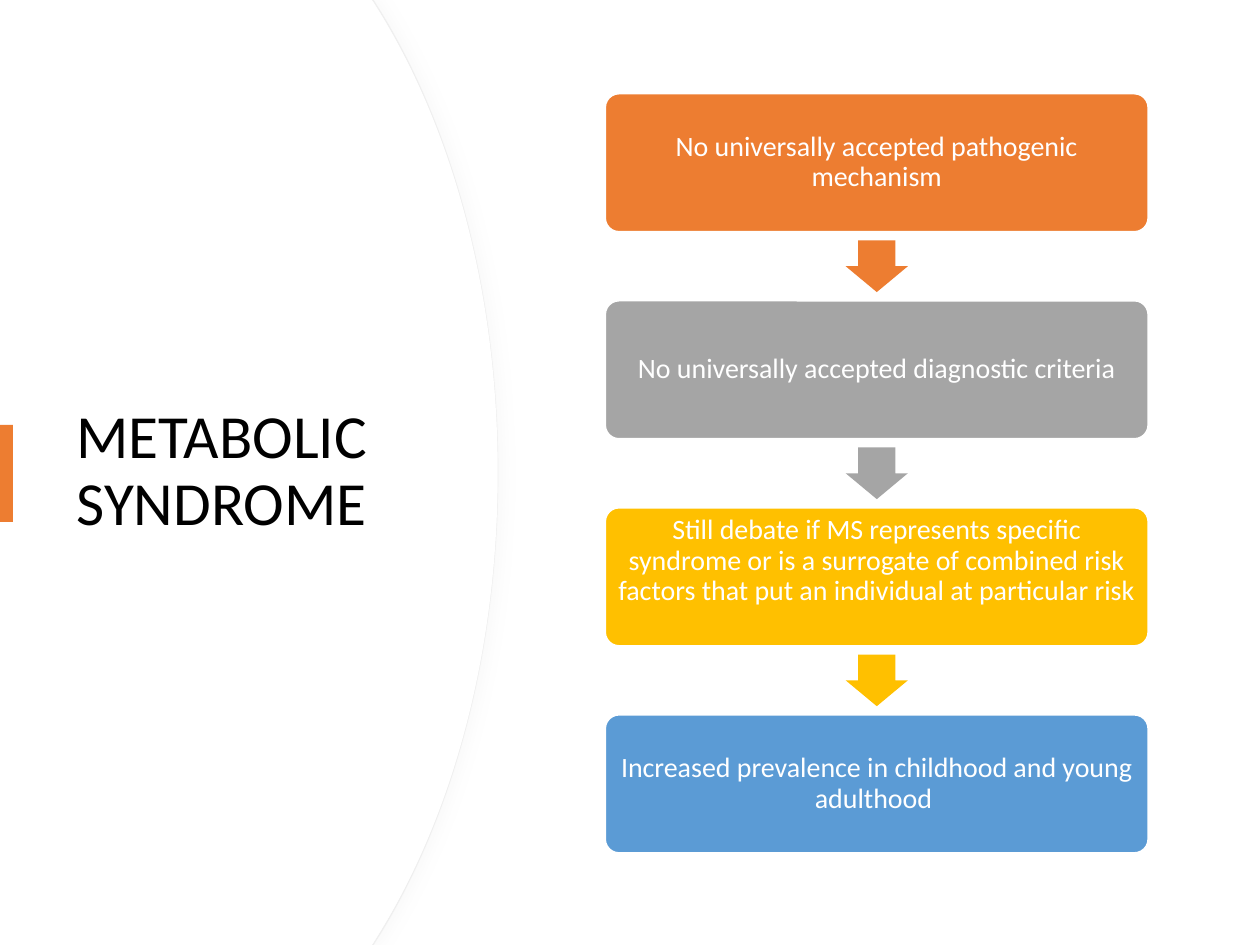
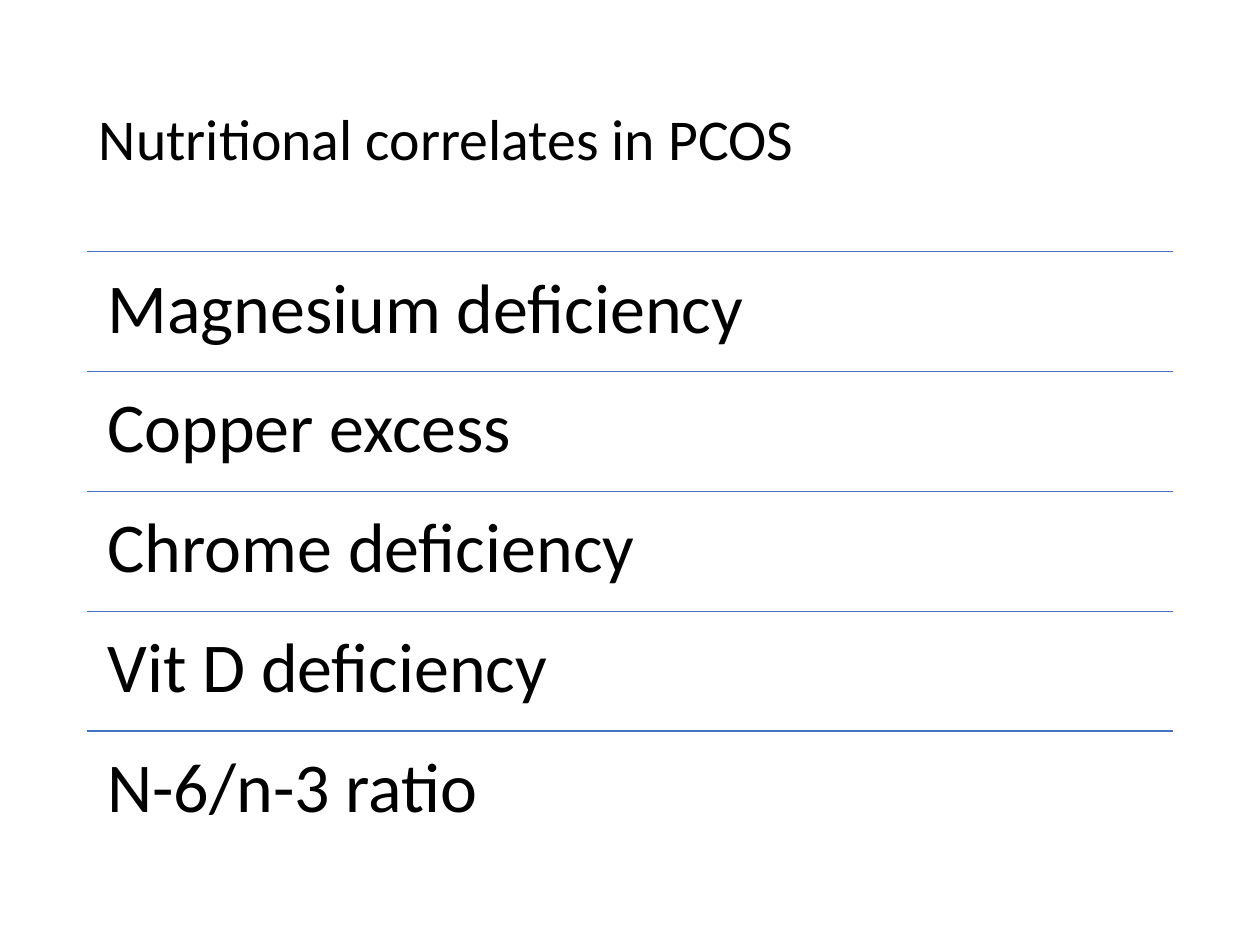
from dataclasses import dataclass

from lxml import etree
from pptx import Presentation
from pptx.dml.color import RGBColor
from pptx.enum.shapes import MSO_CONNECTOR, MSO_SHAPE
from pptx.enum.text import MSO_ANCHOR, PP_ALIGN
from pptx.oxml import parse_xml
from pptx.oxml.ns import nsdecls, qn
from pptx.util import Emu, Pt

PX = 3048
SLIDE_W, SLIDE_H = 3000, 2250
RECT, ROUNDED = MSO_SHAPE.RECTANGLE, MSO_SHAPE.ROUNDED_RECTANGLE
RIGHT_ARROW = MSO_SHAPE.RIGHT_ARROW
STRAIGHT = MSO_CONNECTOR.STRAIGHT
TOP, MIDDLE = MSO_ANCHOR.TOP, MSO_ANCHOR.MIDDLE
LEFT, CENTER = PP_ALIGN.LEFT, PP_ALIGN.CENTER


@dataclass(frozen=True)
class Theme:
    font: str = "Calibri"
    text: str = "000000"
    white: str = "FFFFFF"
    orange: str = "ED7D31"
    gray: str = "A5A5A5"
    gold: str = "FFC000"
    blue: str = "5B9BD5"
    rule: str = "4472C4"
    panel_edge: str = "EFEFEF"
    panel_shadow: str = "D9D9D9"
    side_title: int = 35
    top_title: int = 33
    card: int = 16
    row: int = 40


@dataclass(frozen=True)
class Box:
    x: float
    y: float
    w: float
    h: float


@dataclass(frozen=True)
class TextStyle:
    size: int
    color: str
    align: PP_ALIGN = LEFT
    anchor: MSO_ANCHOR = MIDDLE
    insets: tuple[int, int, int, int] = (30, 15, 30, 15)


@dataclass(frozen=True)
class Card:
    text: str
    color: str
    insets: tuple[int, int, int, int] = (20, 20, 20, 20)


THEME = Theme()
CARDS = (
    Card("No universally accepted pathogenic mechanism", THEME.orange),
    Card("No universally accepted diagnostic criteria", THEME.gray),
    Card("Still debate if MS represents specific syndrome or is a surrogate "
         "of combined risk factors that put an individual at particular risk",
         THEME.gold, (20, 0, 20, 75)),
    Card("Increased prevalence in childhood and young adulthood ", THEME.blue),
)
CORRELATES = ("Magnesium deficiency", "Copper excess", "Chrome deficiency",
              "Vit D deficiency", "N-6/n-3 ratio")


def px(value: float) -> Emu:
    return Emu(round(value * PX))


def place(box: Box) -> tuple[Emu, ...]:
    return tuple(px(v) for v in (box.x, box.y, box.w, box.h))


def rgb(color: str) -> RGBColor:
    return RGBColor.from_string(color)


def set_all(target, values: dict) -> None:
    for name, value in values.items():
        setattr(target, name, value)


def paint(sp, fill: str, line: str | None = None, width: float = 1) -> None:
    sp.shadow.inherit = False
    sp.fill.solid()
    sp.fill.fore_color.rgb = rgb(fill)
    if line:
        sp.line.color.rgb = rgb(line)
        sp.line.width = Pt(width)
    else:
        sp.line.fill.background()


def add_text(s, box: Box, text: str, style: TextStyle) -> None:
    tf = s.shapes.add_textbox(*place(box)).text_frame
    left, top, right, bottom = (px(v) for v in style.insets)
    set_all(tf, {"word_wrap": True, "vertical_anchor": style.anchor,
                 "margin_left": left, "margin_top": top,
                 "margin_right": right, "margin_bottom": bottom})
    p = tf.paragraphs[0]
    set_all(p, {"alignment": style.align, "line_spacing": 0.9})
    r = p.add_run()
    r.text = text
    set_all(r.font, {"name": THEME.font, "size": Pt(style.size)})
    r.font.color.rgb = rgb(style.color)


def add_block(s, kind: MSO_SHAPE, box: Box, fill: str, line: str | None = None,
              adjust: tuple[float, ...] = (), rotation: int = 0) -> None:
    sp = s.shapes.add_shape(kind, *place(box))
    sp.rotation = rotation
    for i, value in enumerate(adjust):
        sp.adjustments[i] = value
    paint(sp, fill, line)


def add_rule(s, x1: float, x2: float, y: float) -> None:
    line = s.shapes.add_connector(STRAIGHT, px(x1), px(y), px(x2), px(y))
    line.line.color.rgb = rgb(THEME.rule)
    line.line.width = Pt(1)
    etree.SubElement(line._element.spPr, qn("a:effectLst"))


def bend(segment, controls: tuple) -> None:
    segment.tag = qn("a:cubicBezTo")
    for i, (x, y) in enumerate(controls):
        pt = etree.Element(qn("a:pt"), x=str(px(x)), y=str(px(y)))
        segment.insert(i, pt)


def add_curved_panel(s, top_x: int):
    upper = [(top_x, 0), (top_x + 15, 24), (1185, SLIDE_H // 2)]
    lower = [(x, SLIDE_H - y) for x, y in reversed(upper[:-1])]
    builder = s.shapes.build_freeform(0, 0, scale=1.0)
    builder.add_line_segments(
        [(px(x), px(y)) for x, y in upper + lower + [(0, SLIDE_H)]], close=True)
    sp = builder.convert_to_shape()
    segments = list(sp._element.iter(qn("a:lnTo")))
    controls = ((1077, 306), (1185, 696))
    mirrored = tuple((x, SLIDE_H - y) for x, y in reversed(controls))
    bend(segments[2], controls)
    bend(segments[3], mirrored)
    return sp


def add_shadow(sp, color: str) -> None:
    effects = sp._element.spPr.find(qn("a:effectLst"))
    effects.append(parse_xml(
        f'<a:outerShdw {nsdecls("a")} blurRad="{Pt(7)}" dist="{Pt(3)}" '
        f'dir="0" algn="l" rotWithShape="0"><a:srgbClr val="{color}">'
        '<a:alpha val="12000"/></a:srgbClr></a:outerShdw>'))


def build_syndrome(s) -> None:
    edge = add_curved_panel(s, 888)
    paint(edge, THEME.white, THEME.panel_edge, 0.75)
    add_shadow(edge, THEME.panel_shadow)
    paint(add_curved_panel(s, 885), THEME.white)
    add_text(s, Box(153, 381, 888, 1486), "METABOLIC SYNDROME",
             TextStyle(THEME.side_title, THEME.text))
    add_block(s, RECT, Box(0, 1012, 31, 231), THEME.orange)

    first, pitch, pad = Box(1441, 223, 1293, 329), 493, 10
    arrow_w, arrow_h = 123, 148
    arrow_x = first.x + (first.w - arrow_w) / 2
    arrow_dy = (first.h + pitch - arrow_h) / 2
    for i, card in enumerate(CARDS):
        y = first.y + i * pitch
        add_block(s, ROUNDED, Box(first.x, y, first.w, first.h),
                  card.color, THEME.white, (0.1,))
        add_text(s, Box(first.x + pad, y + pad,
                        first.w - 2 * pad, first.h - 2 * pad), card.text,
                 TextStyle(THEME.card, THEME.white, CENTER, MIDDLE, card.insets))
        if i < len(CARDS) - 1:
            add_block(s, RIGHT_ARROW,
                      Box(arrow_x, y + arrow_dy, arrow_w, arrow_h),
                      card.color, adjust=(0.6, 0.5), rotation=90)


def build_correlates(s) -> None:
    rows = Box(206, 599, 2588, 1428)
    row_h = rows.h / len(CORRELATES)
    add_text(s, Box(rows.x, 120, rows.w, 435), "Nutritional correlates in PCOS",
             TextStyle(THEME.top_title, THEME.text))
    style = TextStyle(THEME.row, THEME.text, anchor=TOP, insets=(50,) * 4)
    for i, text in enumerate(CORRELATES):
        y = rows.y + i * row_h
        add_rule(s, rows.x, rows.x + rows.w, y)
        add_text(s, Box(rows.x, y, rows.w, row_h), text, style)


def main() -> None:
    prs = Presentation()
    set_all(prs, {"slide_width": px(SLIDE_W), "slide_height": px(SLIDE_H)})
    blank = prs.slide_layouts[6]
    for build in (build_syndrome, build_correlates):
        build(prs.slides.add_slide(blank))
    prs.save("out.pptx")


if __name__ == "__main__":
    main()
